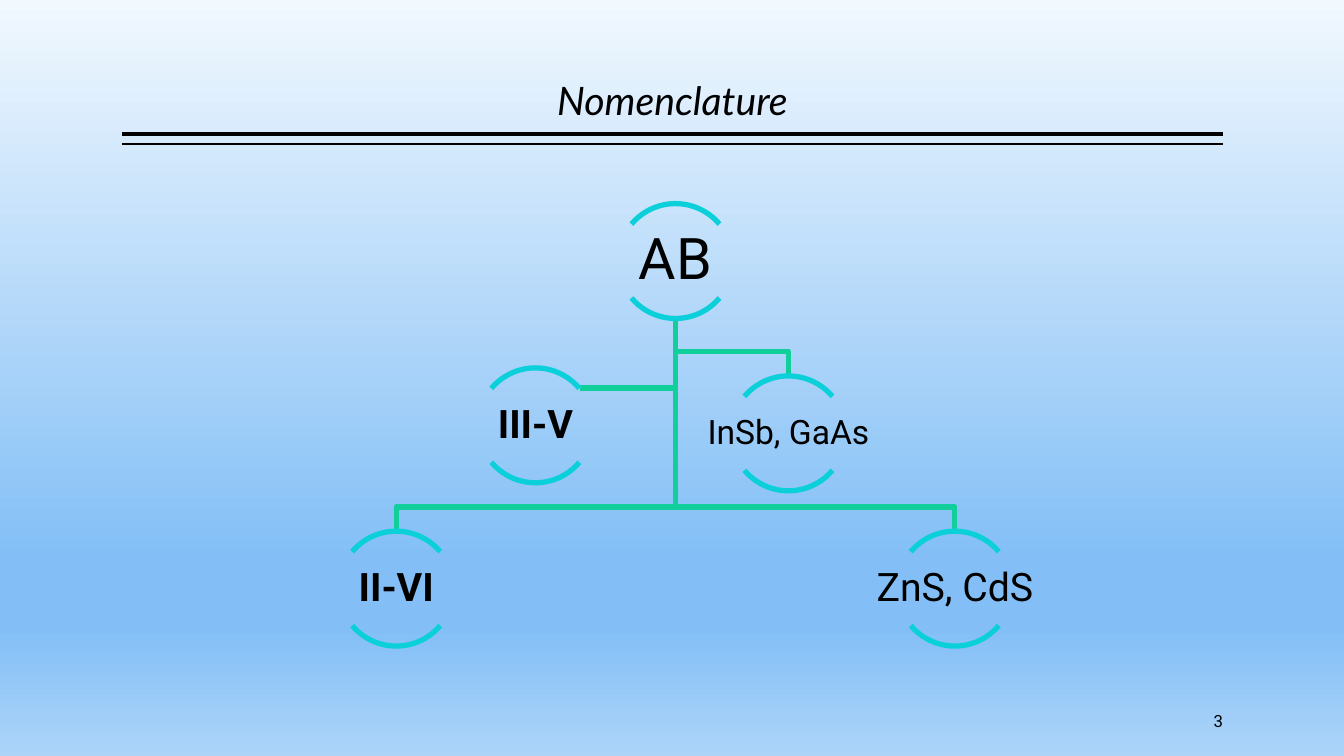
from dataclasses import dataclass

from lxml.etree import SubElement
from pptx import Presentation
from pptx.dml.color import RGBColor
from pptx.enum.shapes import MSO_CONNECTOR, MSO_SHAPE
from pptx.enum.text import MSO_ANCHOR, PP_ALIGN
from pptx.oxml.ns import qn
from pptx.util import Inches, Pt


@dataclass(frozen=True)
class Theme:
    ink: RGBColor = RGBColor.from_string("000000")
    arc: RGBColor = RGBColor.from_string("0BD0D9")
    branch: RGBColor = RGBColor.from_string("10CF9B")
    sky: tuple = ((0, "F1F8FE"), (74, "83BFF6"), (83, "83BFF6"), (100, "ACD4F9"))
    title_font: str = "Lato"
    body_font: str = "Roboto"
    title: int = 28
    root: int = 41
    group: int = 28
    example: int = 24
    number: int = 12
    stroke: float = 3.78


THEME = Theme()


def write(sp, text, size, anchor=MSO_ANCHOR.MIDDLE, align=PP_ALIGN.CENTER,
          margins=(0.02, 0.02), spacing=0.9, **font):
    """Put one styled paragraph in sp; margins are (sides, top and bottom)."""
    tf = sp.text_frame
    side, end = (Inches(m) for m in margins)
    frame = dict(word_wrap=True, vertical_anchor=anchor, margin_left=side,
                 margin_right=side, margin_top=end, margin_bottom=end)
    for name, value in frame.items():
        setattr(tf, name, value)
    p = tf.paragraphs[0]
    p.alignment, p.line_spacing = align, spacing
    r = p.add_run()
    r.text = text
    for name, value in (dict(name=THEME.body_font, size=Pt(size)) | font).items():
        setattr(r.font, name, value)
    r.font.color.rgb = THEME.ink


def outline(sp, color):
    sp.shadow.inherit = False
    sp.fill.background()
    sp.line.color.rgb = color
    sp.line.width = Pt(THEME.stroke)


prs = Presentation()
prs.slide_width, prs.slide_height = Inches(13.33), Inches(7.5)
s = prs.slides.add_slide(prs.slide_layouts[5])

# Background
fill = s.background.fill
fill.gradient()
fill.gradient_angle = 270
stops = s._element.find(".//" + qn("a:gsLst"))
for stop in list(stops):
    stops.remove(stop)
for position, color in THEME.sky:
    stop = SubElement(stops, qn("a:gs"), pos=str(position * 1000))
    SubElement(stop, qn("a:srgbClr"), val=color)

# Title and double rule
left, right = 1.21, 12.13
for y, weight in ((1.33, 3), (1.43, 1)):
    rule = s.shapes.add_connector(MSO_CONNECTOR.STRAIGHT, Inches(left), Inches(y),
                                  Inches(right), Inches(y))
    rule.line.color.rgb = THEME.ink
    rule.line.width = Pt(weight)
    SubElement(rule._element.spPr, qn("a:effectLst"))

title = s.shapes.title
title.left, title.top = Inches(left), Inches(0.08)
title.width, title.height = Inches(right - left), Inches(1.2)
write(title, "Nomenclature", THEME.title, anchor=MSO_ANCHOR.BOTTOM,
      margins=(0, 0.05), name=THEME.title_font, italic=True, bold=False)

# Branches from the root
root_x, root_bottom = 6.7, 3.17
branches = [
    [(root_x, 3.85), (5.75, 3.85)],
    [(root_x, 5.03), (9.47, 5.03), (9.47, 5.27)],
    [(root_x, 3.49), (7.82, 3.49), (7.82, 3.73)],
    [(root_x, 5.03), (3.93, 5.03), (3.93, 5.27)],
]
for points in branches:
    builder = s.shapes.build_freeform(Inches(root_x), Inches(root_bottom))
    builder.add_line_segments([(Inches(x), Inches(y)) for x, y in points], close=False)
    outline(builder.convert_to_shape(), THEME.branch)

# Nodes: centre x, top, label, size, bold
circle, label_w, label_h = 1.14, 2.29, 0.73
arc_angles = ((132, 192), (24, 84))
nodes = [
    (root_x, 2.02, "AB", THEME.root, False),
    (3.93, 5.27, "II-VI", THEME.group, True),
    (7.82, 3.73, "InSb, GaAs", THEME.example, False),
    (9.47, 5.27, "ZnS, CdS", THEME.group, False),
    (5.31, 3.65, "III-V", THEME.group, True),
]
for x, top, label, size, bold in nodes:
    for start, end in arc_angles:
        arc = s.shapes.add_shape(MSO_SHAPE.ARC, Inches(x - circle / 2), Inches(top),
                                 Inches(circle), Inches(circle))
        arc.adjustments[0], arc.adjustments[1] = start, end
        outline(arc, THEME.arc)
    box = s.shapes.add_textbox(Inches(x - label_w / 2),
                               Inches(top + (circle - label_h) / 2),
                               Inches(label_w), Inches(label_h))
    write(box, label, size, bold=bold)

# Slide number
number = s.shapes.add_textbox(Inches(right - 2), Inches(6.95), Inches(2), Inches(0.4))
write(number, "3", THEME.number, align=PP_ALIGN.RIGHT, margins=(0, 0.05), spacing=1.0)

prs.save("out.pptx")
